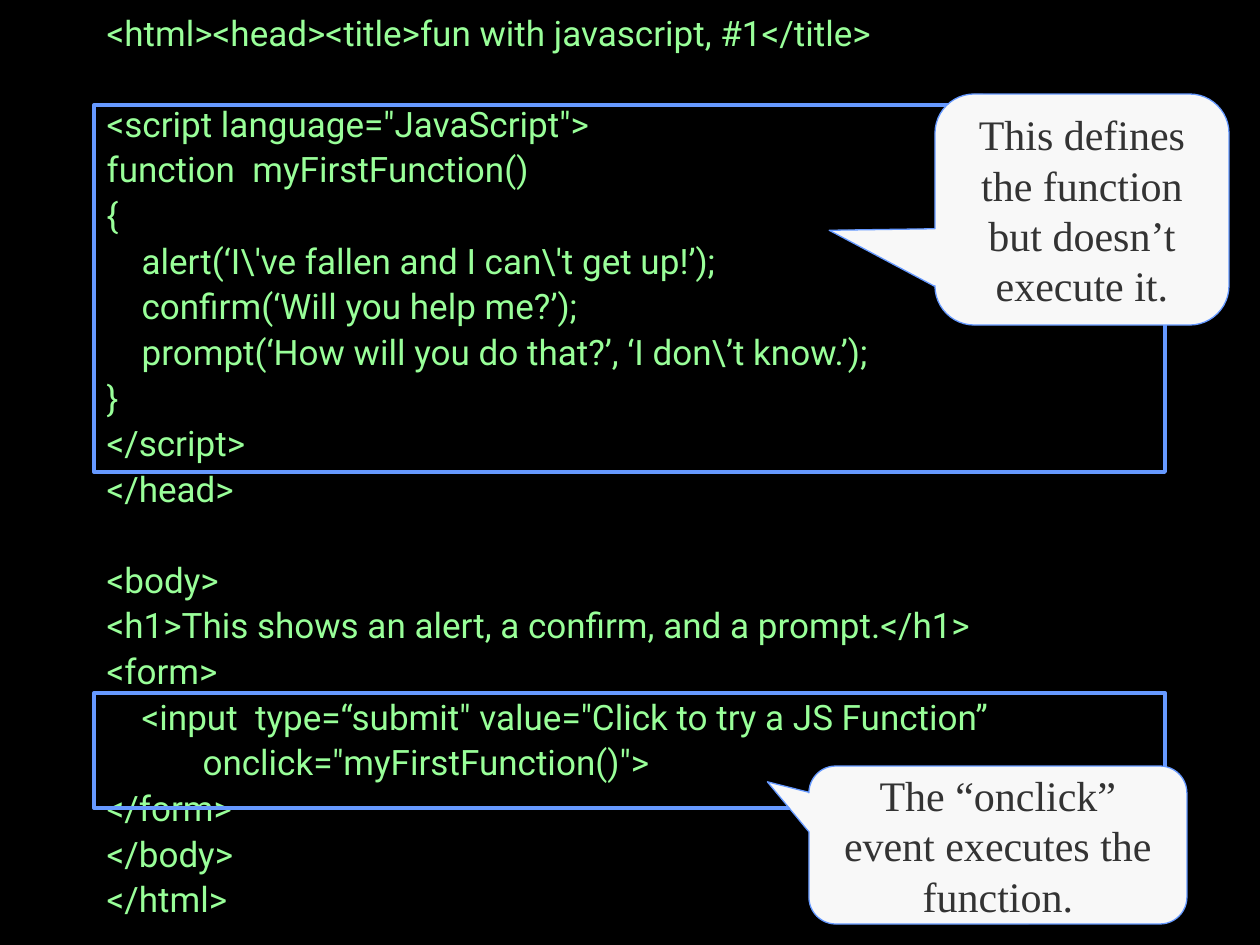
from pptx import Presentation
from pptx.dml.color import RGBColor
from pptx.enum.shapes import MSO_SHAPE as SHAPE
from pptx.enum.text import MSO_ANCHOR as ANCHOR, MSO_AUTO_SIZE as FIT, PP_ALIGN as ALIGN
from pptx.util import Pt
from lxml import etree
from dataclasses import dataclass


@dataclass(frozen=True)
class Theme:
    back: RGBColor = RGBColor.from_string("000000")
    code: RGBColor = RGBColor.from_string("99FF99")
    line: RGBColor = RGBColor.from_string("6699FF")
    note: RGBColor = RGBColor.from_string("F8F8F8")
    ink: RGBColor = RGBColor.from_string("333333")
    code_font: str = "Roboto"
    note_font: str = "Times New Roman"
    code_size: int = 20
    note_size: int = 24


T = Theme()
PX = 914400 / 126
A = "{http://schemas.openxmlformats.org/drawingml/2006/main}"


def px(*values):
    return [round(v * PX) for v in values]


def add_run(p, text, name, size, color):
    r = p.add_run()
    r.text = text
    for key, value in {"name": name, "size": Pt(size)}.items():
        setattr(r.font, key, value)
    r.font.color.rgb = color


prs = Presentation()
prs.slide_width, prs.slide_height = px(1260, 945)
s = prs.slides.add_slide(prs.slide_layouts[1])
s.background.fill.solid()
s.background.fill.fore_color.rgb = T.back
title = s.shapes.title
title.element.getparent().remove(title.element)

GAP = 4.5
BLANK = 30.1
code_lines = [
    (0, GAP, "<html><head><title>fun with javascript, #1</title>"),
    (0, BLANK, '<script language="JavaScript">'),
    (0, GAP, "function  myFirstFunction()"),
    (0, GAP, "{"),
    (35, GAP, "alert(‘I\\'ve fallen and I can\\'t get up!’);"),
    (35, GAP, "confirm(‘Will you help me?’);"),
    (35, GAP, "prompt(‘How will you do that?’, ‘I don\\’t know.’);"),
    (0, GAP, "}"),
    (0, GAP, "</script>"),
    (0, GAP, "</head>"),
    (0, BLANK, "<body>"),
    (0, GAP, "<h1>This shows an alert, a confirm, and a prompt.</h1>"),
    (0, GAP, "<form>"),
    (35, GAP, '<input  type=“submit" value="Click to try a JS Function”'),
    (96, GAP, 'onclick="myFirstFunction()">'),
    (0, GAP, "</form>"),
    (0, GAP, "</body>"),
    (0, GAP, "</html>"),
]

body = s.placeholders[1]
body.left, body.top, body.width, body.height = px(94, 10, 1071, 746)
tf = body.text_frame
for key, value in {"word_wrap": True, "auto_size": FIT.NONE, "vertical_anchor": ANCHOR.TOP}.items():
    setattr(tf, key, value)
for i, (indent, gap, text) in enumerate(code_lines):
    p = tf.add_paragraph() if i else tf.paragraphs[0]
    for key, value in {"line_spacing": 0.9, "space_before": Pt(gap), "alignment": ALIGN.LEFT}.items():
        setattr(p, key, value)
    pPr = p._p.get_or_add_pPr()
    pPr.set("marL", str(px(indent)[0]))
    pPr.set("indent", "0")
    etree.SubElement(pPr, A + "buNone")
    add_run(p, text, T.code_font, T.code_size, T.code)

for top, height in [(693, 115), (105, 367)]:
    frame = s.shapes.add_shape(SHAPE.RECTANGLE, *px(94, top, 1071, height))
    frame.shadow.inherit = False
    frame.fill.background()
    frame.line.color.rgb = T.line
    frame.line.width = Pt(2.25)

callouts = [
    ((935, 94, 294, 231), (-0.86, 0.09, 0.17), "This defines the function but doesn’t execute it."),
    ((809, 766, 378, 158), (-0.61, -0.4, 0.17), "The “onclick” event executes the function."),
]
for box, adjustments, text in callouts:
    sp = s.shapes.add_shape(SHAPE.ROUNDED_RECTANGULAR_CALLOUT, *px(*box))
    for i, value in enumerate(adjustments):
        sp.adjustments[i] = value
    sp.shadow.inherit = False
    sp.fill.solid()
    sp.fill.fore_color.rgb = T.note
    sp.line.color.rgb = T.line
    sp.line.width = Pt(0.75)
    tf = sp.text_frame
    tf.word_wrap = True
    tf.vertical_anchor = ANCHOR.MIDDLE
    p = tf.paragraphs[0]
    p.alignment = ALIGN.CENTER
    add_run(p, text, T.note_font, T.note_size, T.ink)

prs.save("out.pptx")
